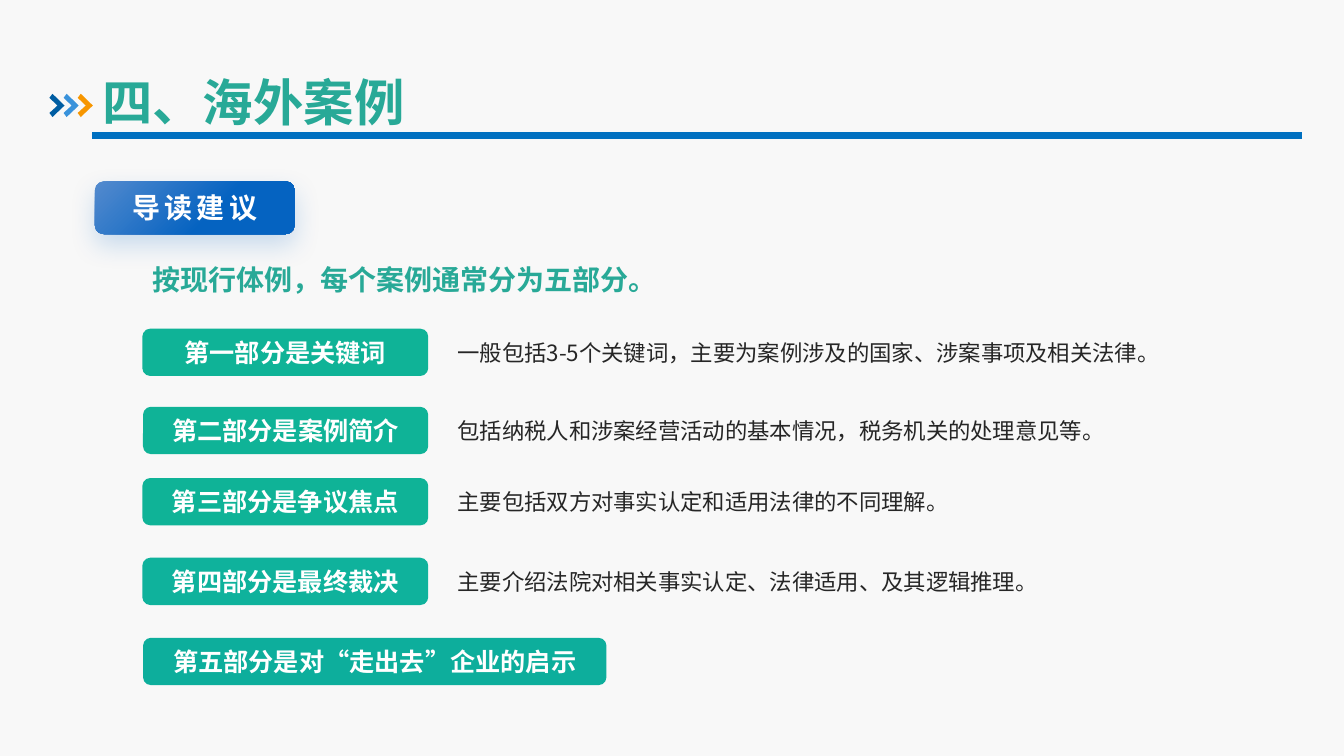
from dataclasses import dataclass

from lxml.etree import SubElement
from pptx import Presentation
from pptx.dml.color import RGBColor
from pptx.enum.shapes import MSO_CONNECTOR, MSO_SHAPE
from pptx.enum.text import MSO_ANCHOR, MSO_AUTO_SIZE, PP_ALIGN
from pptx.oxml.ns import qn
from pptx.util import Pt

FONT = "Noto Sans CJK SC"
BACKGROUND = RGBColor(0xF8, 0xF8, 0xF8)
WHITE = RGBColor(0xFF, 0xFF, 0xFF)
INK = RGBColor(0x26, 0x26, 0x26)
TEAL = RGBColor(0x28, 0xA9, 0x97)
GREEN = RGBColor(0x0F, 0xB3, 0x97)
SEA_GREEN = RGBColor(0x0F, 0xB2, 0x9C)
DEEP_GREEN = RGBColor(0x0D, 0xAE, 0x9C)
RULE_BLUE = RGBColor(0x00, 0x70, 0xC0)
BADGE_LIGHT = RGBColor(0x53, 0x8A, 0xCE)
BADGE_BLUE = RGBColor(0x05, 0x63, 0xC1)
CHEVRON_COLORS = (RGBColor(0x00, 0x5D, 0xA2), RGBColor(0x39, 0x92, 0xDB),
                  RGBColor(0xF7, 0x96, 0x00))
CHEVRON = ((0, 2.9), (2.2, 0), (10.8, 8.4), (2.2, 16.6), (0, 13.7), (5.8, 8.4))


@dataclass
class Part:
    top: float
    label: str
    detail: str = ""
    color: RGBColor = GREEN
    left: float = 101.7
    width: float = 204.2


PARTS = (
    Part(234.8, "第一部分是关键词",
         "一般包括3-5个关键词，主要为案例涉及的国家、涉案事项及相关法律。"),
    Part(290.6, "第二部分是案例简介",
         "包括纳税人和涉案经营活动的基本情况，税务机关的处理意见等。", left=102.2, width=203.7),
    Part(341.5, "第三部分是争议焦点", "主要包括双方对事实认定和适用法律的不同理解。"),
    Part(398.4, "第四部分是最终裁决",
         "主要介绍法院对相关事实认定、法律适用、及其逻辑推理。", SEA_GREEN),
    Part(455.6, "第五部分是对“走出去”企业的启示", color=DEEP_GREEN, left=102.2, width=331),
)


def write(sp, text: str, size: float, color: RGBColor, bold: bool = True,
          align=PP_ALIGN.LEFT, anchor=MSO_ANCHOR.TOP):
    """Fill a shape with one formatted run and return that run."""
    tf = sp.text_frame
    tf.text = text
    tf.word_wrap = True
    tf.vertical_anchor = anchor
    p = tf.paragraphs[0]
    p.alignment = align
    r = p.runs[0]
    r.font.size, r.font.bold, r.font.name = Pt(size), bold, FONT
    r.font.color.rgb = color
    SubElement(r.font._element, qn("a:ea"), typeface=FONT)
    return r


def add_text(s, left: float, top: float, width: float, height: float,
             text: str, size: float, color: RGBColor, bold: bool) -> None:
    sp = s.shapes.add_textbox(Pt(left), Pt(top), Pt(width), Pt(height))
    write(sp, text, size, color, bold)
    sp.text_frame.auto_size = MSO_AUTO_SIZE.SHAPE_TO_FIT_TEXT


def add_box(s, kind: MSO_SHAPE, left: float, top: float, width: float, height: float):
    sp = s.shapes.add_shape(kind, Pt(left), Pt(top), Pt(width), Pt(height))
    sp.shadow.inherit = False
    sp.line.fill.background()
    return sp


def add_header(s) -> None:
    # Rule under the title
    rule = s.shapes.add_connector(MSO_CONNECTOR.STRAIGHT, Pt(66), Pt(96.6), Pt(930), Pt(96.6))
    rule.line.color.rgb = RULE_BLUE
    rule.line.width = Pt(5)
    SubElement(rule._element.spPr, qn("a:effectLst"))

    # Three chevrons
    for i, color in enumerate(CHEVRON_COLORS):
        points = [(Pt(35.3 + 10.1 * i + x), Pt(67 + y)) for x, y in CHEVRON]
        builder = s.shapes.build_freeform(*points[0])
        builder.add_line_segments(points[1:], close=True)
        sp = builder.convert_to_shape()
        sp.shadow.inherit = False
        sp.fill.solid()
        sp.fill.fore_color.rgb = color
        sp.line.fill.background()

    # Title
    title = s.shapes.title
    title.left, title.top, title.width, title.height = Pt(72.9), Pt(51.1), Pt(887), Pt(44)
    write(title, "四、海外案例", 36, TEAL)
    tf = title.text_frame
    tf.margin_left = tf.margin_top = tf.margin_right = tf.margin_bottom = 0
    tf.auto_size = MSO_AUTO_SIZE.SHAPE_TO_FIT_TEXT


def add_badge(s) -> None:
    sp = add_box(s, MSO_SHAPE.FLOWCHART_ALTERNATE_PROCESS, 67.8, 129.6, 142.6, 37.6)
    sp.fill.gradient()
    sp.fill.gradient_angle = 315
    stops = sp.fill.gradient_stops
    for stop, position, color in zip(stops, (0, 0.6), (BADGE_LIGHT, BADGE_BLUE)):
        stop.position = position
        stop.color.rgb = color
    r = write(sp, "导读建议", 20, WHITE, align=PP_ALIGN.CENTER, anchor=MSO_ANCHOR.MIDDLE)
    r.font._element.set("spc", "300")

    # Soft shadow below the badge
    effects = sp._element.spPr.find(qn("a:effectLst"))
    shadow = SubElement(effects, qn("a:outerShdw"), blurRad=str(Pt(19)), dist=str(Pt(8)),
                        dir="5400000", algn="t", rotWithShape="0")
    tint = SubElement(shadow, qn("a:srgbClr"), val=str(BADGE_BLUE))
    SubElement(tint, qn("a:alpha"), val="20000")


def add_part(s, part: Part) -> None:
    if part.detail:
        add_text(s, 319.7, part.top + 4, 640, 26.6, part.detail, 16, INK, False)
    sp = add_box(s, MSO_SHAPE.ROUNDED_RECTANGLE, part.left, part.top, part.width, 33.8)
    sp.fill.solid()
    sp.fill.fore_color.rgb = part.color
    write(sp, part.label, 18, WHITE, align=PP_ALIGN.CENTER, anchor=MSO_ANCHOR.MIDDLE)


def main() -> None:
    prs = Presentation()
    prs.slide_width, prs.slide_height = Pt(960), Pt(540)
    s = prs.slides.add_slide(prs.slide_layouts[5])
    s.background.fill.solid()
    s.background.fill.fore_color.rgb = BACKGROUND

    add_header(s)
    add_badge(s)
    add_text(s, 101.5, 184.3, 579.6, 31.7, "按现行体例，每个案例通常分为五部分。", 20, TEAL, True)
    for part in PARTS:
        add_part(s, part)
    prs.save("out.pptx")


if __name__ == "__main__":
    main()
